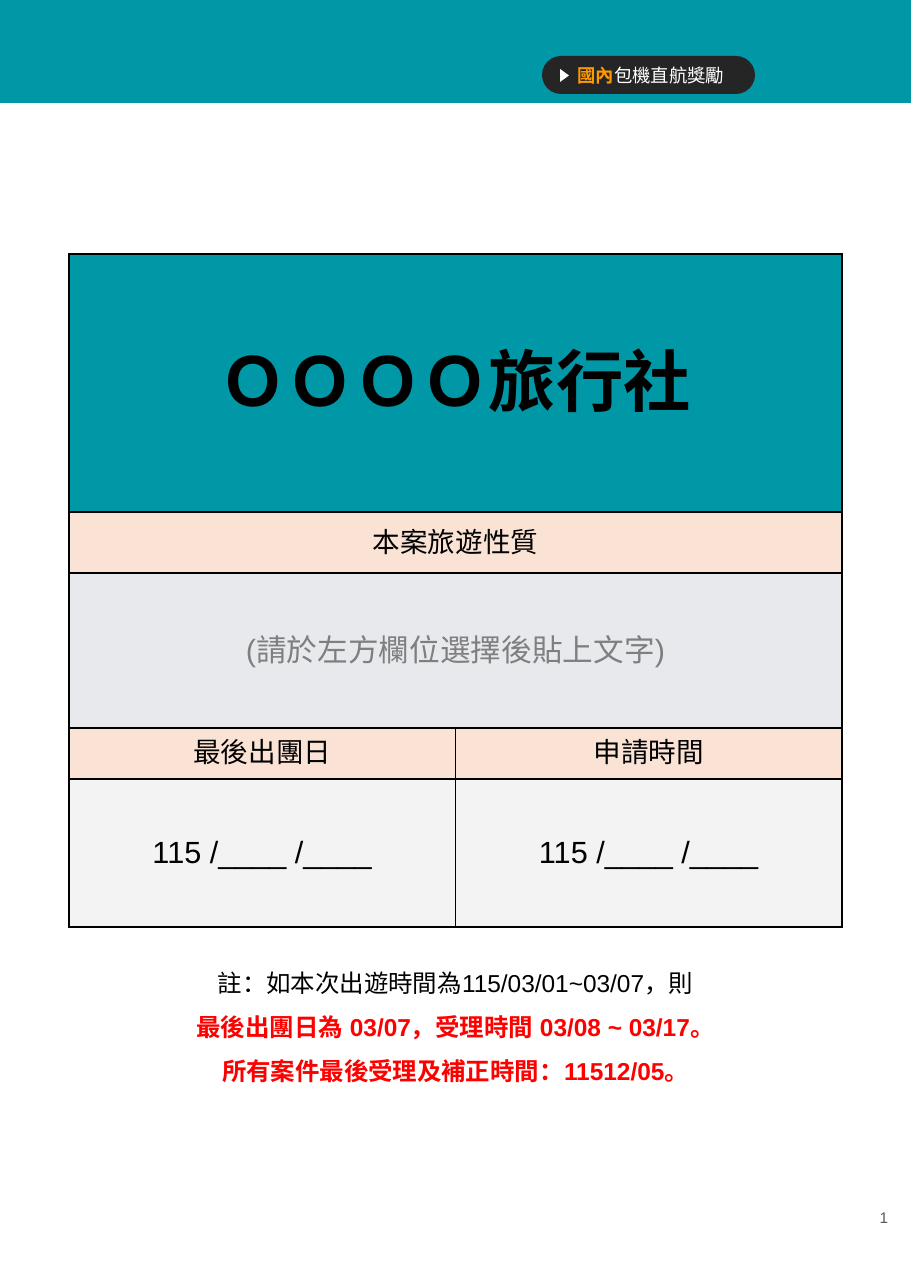
from lxml import etree
from pptx import Presentation
from pptx import util as u
from pptx.dml.color import RGBColor
from pptx.enum import shapes, text
from pptx.oxml.ns import qn

# Content: runs are (text, size, colour, bold)
FONT = "Arial"
COLOURS = {
    "teal": "0097A7", "charcoal": "252525", "orange": "FF9900", "white": "FFFFFF",
    "black": "000000", "peach": "FAE2D5", "mist": "E7E9EC", "pale": "F3F3F3",
    "hint": "7F7F7F", "red": "FF0000", "number": "595959",
}
BADGE = [(" 國內", 12, "orange", True), ("包機直航獎勵", 12, "white", False)]
DATE_BLANK = "115 /____ /____"
# Rows: height, fill, size, colour, bold, cell texts
FORM_ROWS = [
    (258, "teal", 44, "black", True, ["ＯＯＯＯ旅行社"]),
    (61, "peach", 18, "black", False, ["本案旅遊性質"]),
    (155, "mist", 20, "hint", False, ["(請於左方欄位選擇後貼上文字)"]),
    (51, "peach", 18, "black", False, ["最後出團日", "申請時間"]),
    (148, "pale", 20, "black", False, [DATE_BLANK, DATE_BLANK]),
]
NOTES = [
    ("註：如本次出遊時間為115/03/01~03/07，則", 16, "black", False),
    ("最後出團日為 03/07，受理時間 03/08 ~ 03/17。", 16, "red", True),
    ("所有案件最後受理及補正時間：11512/05。", 16, "red", True),
]
PAGE_NUMBER = ("1", 10, "number", False)

# Layout in px
PAGE_W, PAGE_H = 911, 1288
FORM_LEFT, FORM_TOP, FORM_W = 69, 254, 773
COLUMNS = 2


def px(n):
    return u.Emu(round(n * 914400 / 110.2))


def rgb(name):
    return RGBColor.from_string(COLOURS[name])


def add_run(paragraph, words, size, colour, bold):
    run = paragraph.add_run()
    run.text = words
    run.font.size = u.Pt(size)
    run.font.bold = bold
    run.font.color.rgb = rgb(colour)
    run.font.name = FONT
    etree.SubElement(run.font._element, qn("a:ea"), typeface=FONT)


def add_block(slide, kind, box, fill):
    block = slide.shapes.add_shape(kind, *map(px, box))
    block.shadow.inherit = False
    block.fill.solid()
    block.fill.fore_color.rgb = rgb(fill)
    block.line.fill.background()
    return block


def add_borders(cell):
    props = cell._tc.get_or_add_tcPr()
    for side in ("lnL", "lnR", "lnT", "lnB"):
        line = etree.SubElement(props, qn(f"a:{side}"), w=str(u.Pt(1)))
        solid = etree.SubElement(line, qn("a:solidFill"))
        etree.SubElement(solid, qn("a:srgbClr"), val=COLOURS["black"])


def add_header(slide):
    band = add_block(slide, shapes.MSO_SHAPE.RECTANGLE, (-8, -6, 921, 109), "teal")
    band.line.color.rgb = rgb("teal")
    band.line.width = u.Pt(0.75)

    badge = add_block(slide, shapes.MSO_SHAPE.ROUNDED_RECTANGLE,
                      (542, 56, 213, 38), "charcoal")
    badge.adjustments[0] = 0.5
    frame = badge.text_frame
    frame.margin_top = frame.margin_bottom = px(11)
    frame.vertical_anchor = text.MSO_ANCHOR.MIDDLE
    frame.paragraphs[0].alignment = text.PP_ALIGN.CENTER
    for piece in BADGE:
        add_run(frame.paragraphs[0], *piece)

    pointer = add_block(slide, shapes.MSO_SHAPE.ISOSCELES_TRIANGLE,
                        (558, 71, 13, 9), "white")
    pointer.rotation = 90


def add_form(slide):
    heights = [row[0] for row in FORM_ROWS]
    form = slide.shapes.add_table(len(FORM_ROWS), COLUMNS, px(FORM_LEFT), px(FORM_TOP),
                                  px(FORM_W), px(sum(heights))).table
    form.first_row = form.horz_banding = False
    for column in form.columns:
        column.width = px(FORM_W / COLUMNS)
    for r, (height, fill, size, colour, bold, words) in enumerate(FORM_ROWS):
        form.rows[r].height = px(height)
        for c in range(COLUMNS):
            cell = form.cell(r, c)
            add_borders(cell)
            cell.fill.solid()
            cell.fill.fore_color.rgb = rgb(fill)
            cell.vertical_anchor = text.MSO_ANCHOR.MIDDLE
            if c < len(words):
                paragraph = cell.text_frame.paragraphs[0]
                paragraph.alignment = text.PP_ALIGN.CENTER
                add_run(paragraph, words[c], size, colour, bold)
        if len(words) == 1:
            form.cell(r, 0).merge(form.cell(r, COLUMNS - 1))


def add_lines(slide, box, lines, align, spacing):
    frame = slide.shapes.add_textbox(*map(px, box)).text_frame
    frame.word_wrap = True
    for i, line in enumerate(lines):
        paragraph = frame.add_paragraph() if i else frame.paragraphs[0]
        paragraph.alignment = align
        paragraph.line_spacing = spacing
        add_run(paragraph, *line)
    return frame


def main():
    deck = Presentation()
    deck.slide_width, deck.slide_height = px(PAGE_W), px(PAGE_H)
    slide = deck.slides.add_slide(deck.slide_layouts[6])

    add_header(slide)
    add_form(slide)

    # Page number, then the notes below the form
    number = add_lines(slide, (844, 1168, 55, 98), [PAGE_NUMBER],
                       text.PP_ALIGN.RIGHT, 1.0)
    number.vertical_anchor = text.MSO_ANCHOR.MIDDLE
    notes = add_lines(slide, (FORM_LEFT, 942, FORM_W, 141), NOTES,
                      text.PP_ALIGN.CENTER, 1.5)
    notes.margin_top = notes.margin_bottom = px(11)

    deck.save("out.pptx")


if __name__ == "__main__":
    main()
